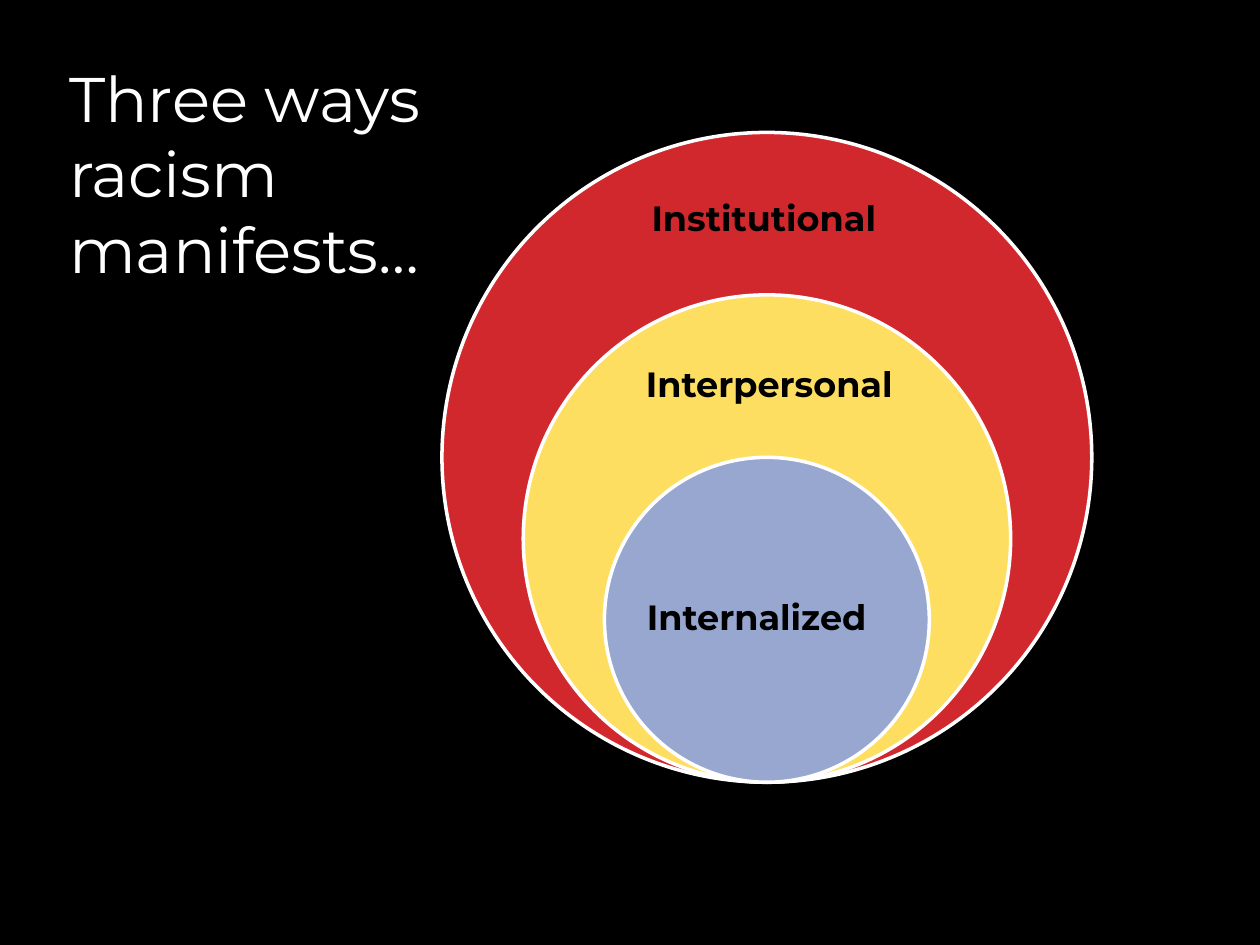
from pptx import Presentation
from pptx.dml.color import RGBColor
from pptx.enum.shapes import MSO_SHAPE
from pptx.enum.text import MSO_ANCHOR, MSO_AUTO_SIZE, PP_ALIGN
from pptx.util import Cm, Pt

BLACK = RGBColor(0x00, 0x00, 0x00)
WHITE = RGBColor(0xFF, 0xFF, 0xFF)
RED = RGBColor(0xD1, 0x28, 0x2E)
YELLOW = RGBColor(0xFE, 0xDE, 0x61)
BLUE = RGBColor(0x97, 0xA7, 0xD0)
FONT = "Montserrat"

# Content: label, circle fill, label top, width and height in cm
TITLE = ["Three ways racism", "manifests…"]
LEVELS = [
    ("Institutional ", RED, 3.45, 5.54, 1.96),
    ("Interpersonal", YELLOW, 6.88, 5.56, 1.83),
    ("Internalized", BLUE, 10.85, 5.05, 3.28),
]

# Circles shrink by a quarter of the largest and share their lowest point
LARGEST_DIAMETER = 13.1
CENTER_X = 15.46
BOTTOM = 15.77
LABEL_LEFT = 12.73


def add_run(paragraph, text, size, color, bold=False):
    run = paragraph.add_run()
    run.text = text
    run.font.name = FONT
    run.font.size = Pt(size)
    run.font.bold = bold
    run.font.color.rgb = color


def add_title(slide):
    title = slide.shapes.title
    title.left, title.top = Cm(1.14), Cm(1.07)
    title.width, title.height = Cm(7.72), Cm(4.88)
    frame = title.text_frame
    frame.word_wrap = True
    frame.auto_size = MSO_AUTO_SIZE.NONE
    frame.vertical_anchor = MSO_ANCHOR.TOP
    for index, line in enumerate(TITLE):
        paragraph = frame.add_paragraph() if index else frame.paragraphs[0]
        paragraph.alignment = PP_ALIGN.LEFT
        paragraph.space_before = Pt(0)
        add_run(paragraph, line, 36, WHITE)


def add_circle(slide, diameter, color):
    circle = slide.shapes.add_shape(
        MSO_SHAPE.OVAL, Cm(CENTER_X - diameter / 2), Cm(BOTTOM - diameter),
        Cm(diameter), Cm(diameter))
    circle.shadow.inherit = False
    circle.fill.solid()
    circle.fill.fore_color.rgb = color
    circle.line.color.rgb = WHITE
    circle.line.width = Pt(2)


def add_label(slide, text, top, width, height):
    label = slide.shapes.add_textbox(
        Cm(LABEL_LEFT), Cm(top), Cm(width), Cm(height))
    frame = label.text_frame
    frame.word_wrap = True
    frame.vertical_anchor = MSO_ANCHOR.MIDDLE
    frame.margin_left = frame.margin_right = Cm(0.2)
    frame.margin_top = frame.margin_bottom = Cm(0.2)
    paragraph = frame.paragraphs[0]
    paragraph.alignment = PP_ALIGN.CENTER
    paragraph.line_spacing = 0.9
    paragraph.space_after = Pt(7)
    add_run(paragraph, text, 20, BLACK, bold=True)


def main():
    presentation = Presentation()
    presentation.slide_width = Cm(25.4)
    presentation.slide_height = Cm(19.05)
    slide = presentation.slides.add_slide(presentation.slide_layouts[5])
    slide.background.fill.solid()
    slide.background.fill.fore_color.rgb = BLACK

    add_title(slide)

    # Nested circles, largest at the back
    for index, (text, color, top, width, height) in enumerate(LEVELS):
        add_circle(slide, LARGEST_DIAMETER * (1 - index / 4), color)
        add_label(slide, text, top, width, height)

    presentation.save("out.pptx")


if __name__ == "__main__":
    main()
